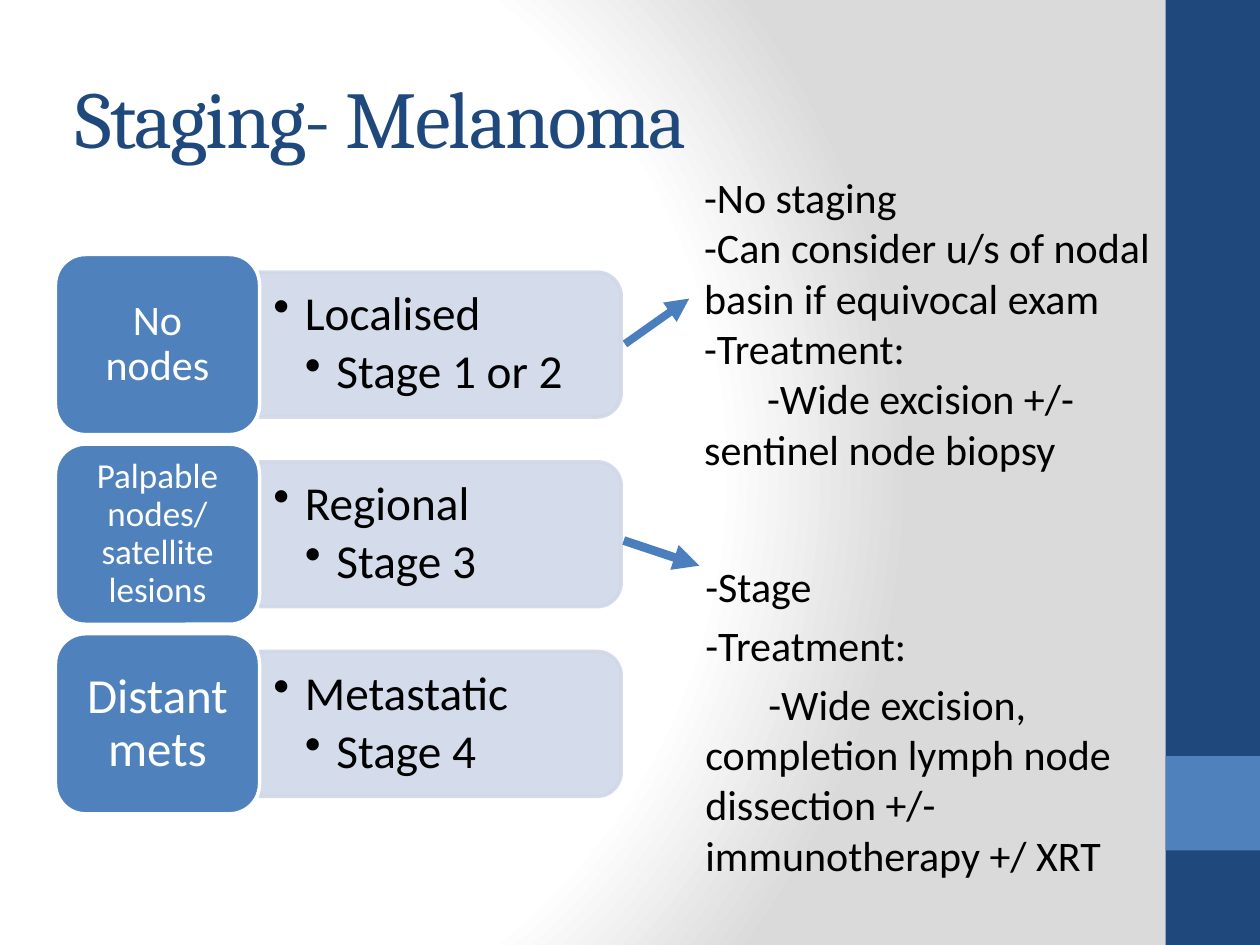
from lxml.etree import SubElement
from pptx import Presentation
from pptx.dml.color import RGBColor
from pptx.enum.shapes import MSO_CONNECTOR, MSO_SHAPE as SHAPE
from pptx.enum.text import MSO_ANCHOR as ANCHOR, PP_ALIGN as ALIGN
from pptx.oxml import parse_xml
from pptx.oxml.ns import nsdecls, qn
from pptx.util import Inches, Pt

NAVY = RGBColor(0x1F, 0x49, 0x7D)
BLUE = RGBColor(0x4F, 0x81, 0xBD)
ARROW_BLUE = RGBColor(0x4B, 0x7E, 0xBC)
PALE = RGBColor(0xD0, 0xD8, 0xE8)
WHITE = RGBColor(0xFF, 0xFF, 0xFF)
BLACK = RGBColor(0, 0, 0)

TITLE = "Staging- Melanoma"
STAGES = [
    ("No nodes", 24, ("Localised", "Stage 1 or 2")),
    ("Palpable nodes/ satellite lesions", 20, ("Regional", "Stage 3")),
    ("Distant mets", 28, ("Metastatic", "Stage 4")),
]
NOTES = [
    ((4.99, 1.31, 4.37, 2.52), 0.5, 0, [
        "-No staging",
        "-Can consider u/s of nodal basin if equivocal exam",
        "-Treatment:",
        "\t-Wide excision +/- sentinel node biopsy",
    ]),
    ((5.05, 4.4, 4.27, 2.54), 0.45, 4.8, [
        "-Stage",
        "-Treatment:",
        "\t-Wide excision, completion lymph node dissection +/- immunotherapy +/ XRT",
    ]),
]
ARROWS = [((4.96, 2.73), (5.47, 2.37), 4.5), ((4.95, 4.29), (5.55, 4.49), 5)]
SIDEBAR = [((9.25, 0, 0.75, 7.5), NAVY), ((9.25, 6, 0.75, 0.75), BLUE)]

FIRST_TOP, LAST_TOP = 2.02, 5.03
LABEL_LEFT, LABEL_WIDTH, LABEL_HEIGHT = 0.44, 1.62, 1.43
PANEL_WIDTH, PANEL_HEIGHT = 2.87, 1.15
LIST_WIDTH, LIST_HEIGHT = 2.82, 1.03


def inches(values):
    return [Inches(value) for value in values]


def set_background(slide):
    slide.background.fill.gradient()
    properties = slide.background._cSld.bg.bgPr
    gradient = parse_xml(
        f'<a:gradFill {nsdecls("a")} rotWithShape="1"><a:gsLst>'
        '<a:gs pos="0"><a:srgbClr val="FFFFFF"/></a:gs>'
        '<a:gs pos="75000"><a:srgbClr val="FFFFFF"/></a:gs>'
        '<a:gs pos="100000"><a:srgbClr val="DADADA"/></a:gs></a:gsLst>'
        '<a:path path="circle">'
        '<a:fillToRect l="20000" t="50000" r="100000" b="50000"/>'
        '</a:path></a:gradFill>')
    properties.replace(properties.find(qn("a:gradFill")), gradient)


def add_block(slide, kind, box, fill, line=None):
    shape = slide.shapes.add_shape(kind, *inches(box))
    shape.shadow.inherit = False
    shape.fill.solid()
    shape.fill.fore_color.rgb = fill
    if line is None:
        shape.line.fill.background()
    else:
        shape.line.color.rgb = line
        shape.line.width = Pt(2)
    return shape


def set_font(paragraph, size, color, name="Calibri"):
    font = paragraph.font
    font.name, font.size, font.color.rgb = name, Pt(size), color


def set_margins(frame, side, end):
    frame.margin_left = frame.margin_right = Inches(side)
    frame.margin_top = frame.margin_bottom = Inches(end)


def add_text(slide, box):
    frame = slide.shapes.add_textbox(*inches(box)).text_frame
    frame.word_wrap = True
    return frame


def fill_paragraphs(frame, texts):
    for index, text in enumerate(texts):
        paragraph = frame.paragraphs[0] if index == 0 else frame.add_paragraph()
        paragraph.text = text
        yield index, paragraph


def set_indent(paragraph, left, first=0):
    properties = paragraph._p.get_or_add_pPr()
    properties.set("marL", str(Inches(left)))
    properties.set("indent", str(Inches(first)))
    return properties


def add_stage(slide, top, label, size, lines):
    middle = top + LABEL_HEIGHT / 2
    right = LABEL_LEFT + LABEL_WIDTH
    panel = add_block(slide, SHAPE.ROUND_2_SAME_RECTANGLE,
                      (right + (PANEL_WIDTH - PANEL_HEIGHT) / 2, middle - PANEL_WIDTH / 2,
                       PANEL_HEIGHT, PANEL_WIDTH), PALE, PALE)
    panel.rotation = 90
    for color in panel._element.spPr.iter(qn("a:srgbClr")):
        SubElement(color, qn("a:alpha"), val="90000")

    frame = add_text(slide, (right, middle - LIST_HEIGHT / 2, LIST_WIDTH, LIST_HEIGHT))
    frame.vertical_anchor = ANCHOR.MIDDLE
    set_margins(frame, 0.11, 0.06)
    for level, paragraph in fill_paragraphs(frame, lines):
        properties = set_indent(paragraph, 0.25 * (level + 1), -0.25)
        SubElement(properties, qn("a:buChar"), char="•")
        paragraph.level = level + 1
        paragraph.line_spacing = 0.9
        paragraph.space_after = Pt(4)
        set_font(paragraph, 27, BLACK)

    block = add_block(slide, SHAPE.ROUNDED_RECTANGLE,
                      (LABEL_LEFT, top, LABEL_WIDTH, LABEL_HEIGHT), BLUE, WHITE)
    frame = block.text_frame
    frame.word_wrap = True
    frame.vertical_anchor = ANCHOR.MIDDLE
    set_margins(frame, 0.12, 0.04)
    paragraph = frame.paragraphs[0]
    paragraph.text = label
    paragraph.alignment = ALIGN.CENTER
    paragraph.line_spacing = 0.9
    set_font(paragraph, size, WHITE)


def add_arrow(slide, start, end, width):
    arrow = slide.shapes.add_connector(MSO_CONNECTOR.STRAIGHT, *inches(start + end))
    arrow.line.color.rgb = ARROW_BLUE
    arrow.line.width = Pt(width)
    SubElement(arrow.line._get_or_add_ln(), qn("a:tailEnd"), type="triangle")
    SubElement(arrow._element.spPr, qn("a:effectLst"))


def main():
    presentation = Presentation()
    presentation.slide_width, presentation.slide_height = Inches(10), Inches(7.5)
    slide = presentation.slides.add_slide(presentation.slide_layouts[5])
    set_background(slide)
    for box, color in SIDEBAR:
        add_block(slide, SHAPE.RECTANGLE, box, color)

    title = slide.shapes.title
    title.left, title.top, title.width, title.height = inches((0.5, 0.3, 8.33, 1.25))
    title.text_frame.text = TITLE
    title.text_frame.vertical_anchor = ANCHOR.MIDDLE
    paragraph = title.text_frame.paragraphs[0]
    paragraph.alignment = ALIGN.LEFT
    set_font(paragraph, 46, NAVY, "Cambria")
    paragraph.runs[0]._r.get_or_add_rPr().set("spc", "-100")

    step = (LAST_TOP - FIRST_TOP) / (len(STAGES) - 1)
    for index, stage in enumerate(STAGES):
        add_stage(slide, FIRST_TOP + index * step, *stage)

    for box, indent, gap, lines in NOTES:
        for index, paragraph in fill_paragraphs(add_text(slide, box), lines):
            set_indent(paragraph, indent)
            if index and gap:
                paragraph.space_before = Pt(gap)
            set_font(paragraph, 24, BLACK)

    for arrow in ARROWS:
        add_arrow(slide, *arrow)
    presentation.save("out.pptx")


if __name__ == "__main__":
    main()
